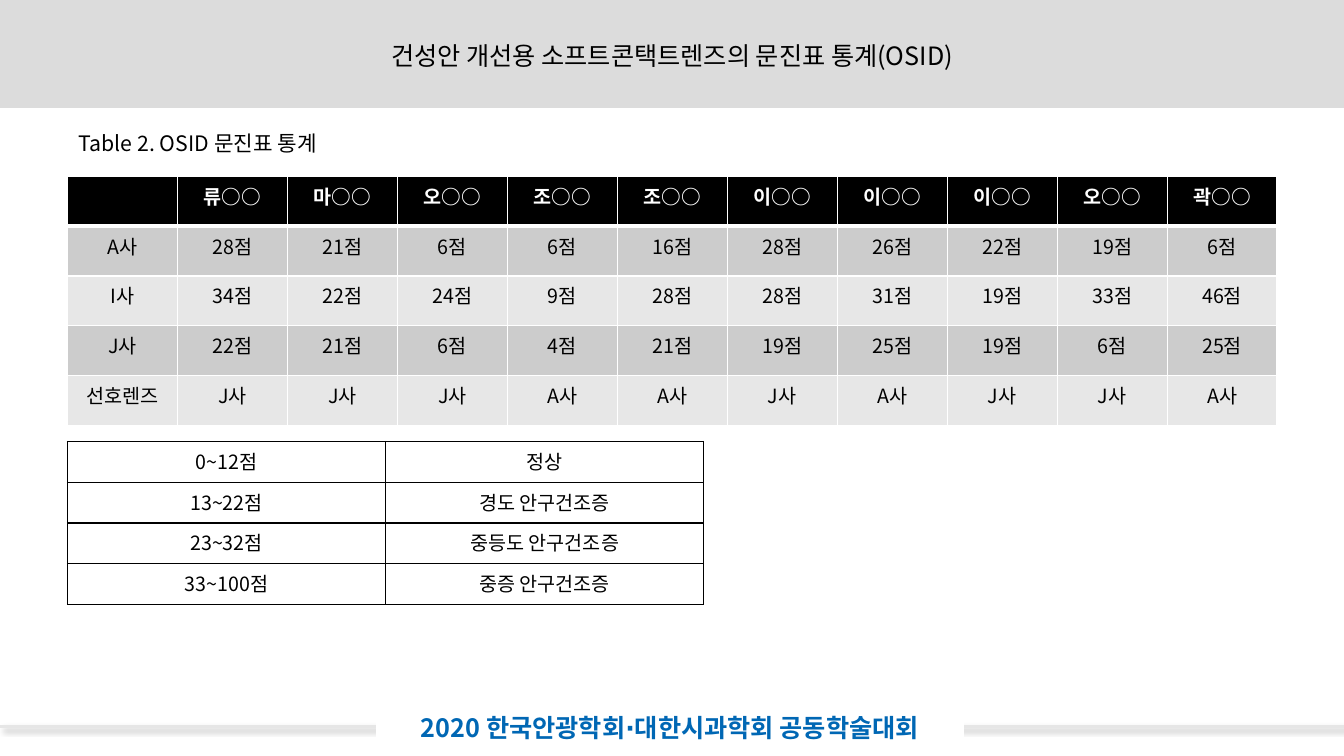
import pptx
import pptx.util
import pptx.dml.color
import pptx.enum.shapes
import pptx.enum.text
import pptx.oxml
import pptx.oxml.ns
from dataclasses import dataclass

Inches = pptx.util.Inches
Pt = pptx.util.Pt

# Content
TITLE = "건성안 개선용 소프트콘택트렌즈의 문진표 통계(OSID)"
CAPTION = "Table 2. OSID 문진표 통계"
FOOTER = "2020 한국안광학회⋅대한시과학회 공동학술대회"
SUBJECTS = ["류", "마", "오", "조", "조", "이", "이", "이", "오", "곽"]
SCORES = {
    "A사": [28, 21, 6, 6, 16, 28, 26, 22, 19, 6],
    "I사": [34, 22, 24, 9, 28, 28, 31, 19, 33, 46],
    "J사": [22, 21, 6, 4, 21, 19, 25, 19, 6, 25],
}
PREFERRED = "JJJAAJAJJA"
GRADES = [
    ("0~12점", "정상"),
    ("13~22점", "경도 안구건조증"),
    ("23~32점", "중등도 안구건조증"),
    ("33~100점", "중증 안구건조증"),
]


@dataclass(frozen=True)
class Theme:
    font: str = "Noto Sans CJK KR"
    black: str = "000000"
    white: str = "FFFFFF"
    band: str = "DCDCDC"
    rule: str = "E6E6E6"
    footer: str = "0067B4"
    dark_row: str = "CCCCCC"
    light_row: str = "E7E7E7"
    heading_size: float = 18
    caption_size: float = 15.2
    table_size: float = 14


THEME = Theme()
CENTER = pptx.enum.text.PP_ALIGN.CENTER
MIDDLE = pptx.enum.text.MSO_ANCHOR.MIDDLE


def rgb(color):
    return pptx.dml.color.RGBColor.from_string(color)


def xml_part(text):
    return pptx.oxml.parse_xml(text.replace(">", " " + pptx.oxml.ns.nsdecls("a") + ">", 1))


def write(frame, text, size, color=THEME.black, bold=False, align=CENTER):
    frame.text = text
    para = frame.paragraphs[0]
    para.alignment = align
    font = para.font
    font.name, font.size, font.bold = THEME.font, Pt(size), bold
    font.color.rgb = rgb(color)
    # East Asian letters need their own font entry
    defaults = para._p.pPr.find(pptx.oxml.ns.qn("a:defRPr"))
    defaults.append(xml_part(f'<a:ea typeface="{THEME.font}"></a:ea>'))


def add_block(page, left, top, width, height, color):
    block = page.shapes.add_shape(
        pptx.enum.shapes.MSO_SHAPE.RECTANGLE,
        Inches(left), Inches(top), Inches(width), Inches(height))
    block.shadow.inherit = False
    block.fill.solid()
    block.fill.fore_color.rgb = rgb(color)
    block.line.fill.background()
    return block


def set_borders(cell, color, widths):
    properties = cell._tc.get_or_add_tcPr()
    for side, width in zip("LRTB", widths):
        properties.append(xml_part(
            f'<a:ln{side} w="{Pt(width)}"><a:solidFill><a:srgbClr val="{color}"/>'
            f'</a:solidFill></a:ln{side}>'))


def add_grid(page, rows, left, top, width, height, border, fills, header=False):
    table = page.shapes.add_table(
        len(rows), len(rows[0]),
        Inches(left), Inches(top), Inches(width), Inches(height)).table
    table.first_row = header
    table.horz_banding = False
    for column in table.columns:
        column.width = Inches(width / len(rows[0]))
    for row_index, row in enumerate(rows):
        table.rows[row_index].height = Inches(height / len(rows))
        is_header = header and row_index == 0
        top_width = 3 if header and row_index == 1 else 1
        bottom_width = 3 if is_header else 1
        for column_index, text in enumerate(row):
            cell = table.cell(row_index, column_index)
            color = THEME.white if is_header else THEME.black
            write(cell.text_frame, text, THEME.table_size, color, is_header)
            set_borders(cell, border, (1, 1, top_width, bottom_width))
            if fills[row_index]:
                cell.fill.solid()
                cell.fill.fore_color.rgb = rgb(fills[row_index])
            else:
                cell.fill.background()


def main():
    deck = pptx.Presentation()
    deck.slide_width, deck.slide_height = Inches(13.33), Inches(7.5)
    page = deck.slides.add_slide(deck.slide_layouts[5])

    # Header band and footer rule
    add_block(page, 0, 0, 13.33, 1.07, THEME.band)
    rule = page.shapes.add_connector(
        pptx.enum.shapes.MSO_CONNECTOR.STRAIGHT,
        Inches(0), Inches(7.21), Inches(13.33), Inches(7.21))
    rule.line.color.rgb = rgb(THEME.rule)
    rule.line.width = Pt(2.25)
    rule._element.spPr.append(xml_part(
        f'<a:effectLst><a:outerShdw blurRad="{Pt(4)}" dist="{Pt(3)}" dir="2700000">'
        f'<a:srgbClr val="{THEME.black}"><a:alpha val="20000"/></a:srgbClr>'
        '</a:outerShdw></a:effectLst>'))

    # Conference name
    footer = add_block(page, 3.73, 6.96, 5.83, 0.52, THEME.white)
    frame = footer.text_frame
    frame.margin_left = frame.margin_right = Inches(0.34)
    frame.margin_top = frame.margin_bottom = Inches(0.17)
    frame.vertical_anchor = MIDDLE
    write(frame, FOOTER, THEME.heading_size, THEME.footer, bold=True)

    # Title, raised above the band
    title = page.shapes.title
    title.left, title.top = Inches(1.07), Inches(0.19)
    title.width, title.height = Inches(11.19), Inches(0.71)
    title.text_frame.vertical_anchor = MIDDLE
    write(title.text_frame, TITLE, THEME.heading_size)
    page.shapes._spTree.append(title._element)

    # Survey scores
    rows = [[""] + [name + "○○" for name in SUBJECTS]]
    rows += [[lens] + [f"{score}점" for score in scores] for lens, scores in SCORES.items()]
    rows.append(["선호렌즈"] + [f"{maker}사" for maker in PREFERRED])
    fills = [THEME.black] + [THEME.dark_row, THEME.light_row] * 2
    add_grid(page, rows, 0.67, 1.75, 12, 2.47, THEME.white, fills, header=True)

    # Score grades
    add_grid(page, GRADES, 0.67, 4.38, 6.31, 1.62, THEME.black, [None] * len(GRADES))

    # Table caption
    caption = page.shapes.add_textbox(Inches(0.68), Inches(1.24), Inches(6.02), Inches(0.36))
    caption.text_frame.word_wrap = True
    write(caption.text_frame, CAPTION, THEME.caption_size, align=pptx.enum.text.PP_ALIGN.LEFT)

    deck.save("out.pptx")


if __name__ == "__main__":
    main()
